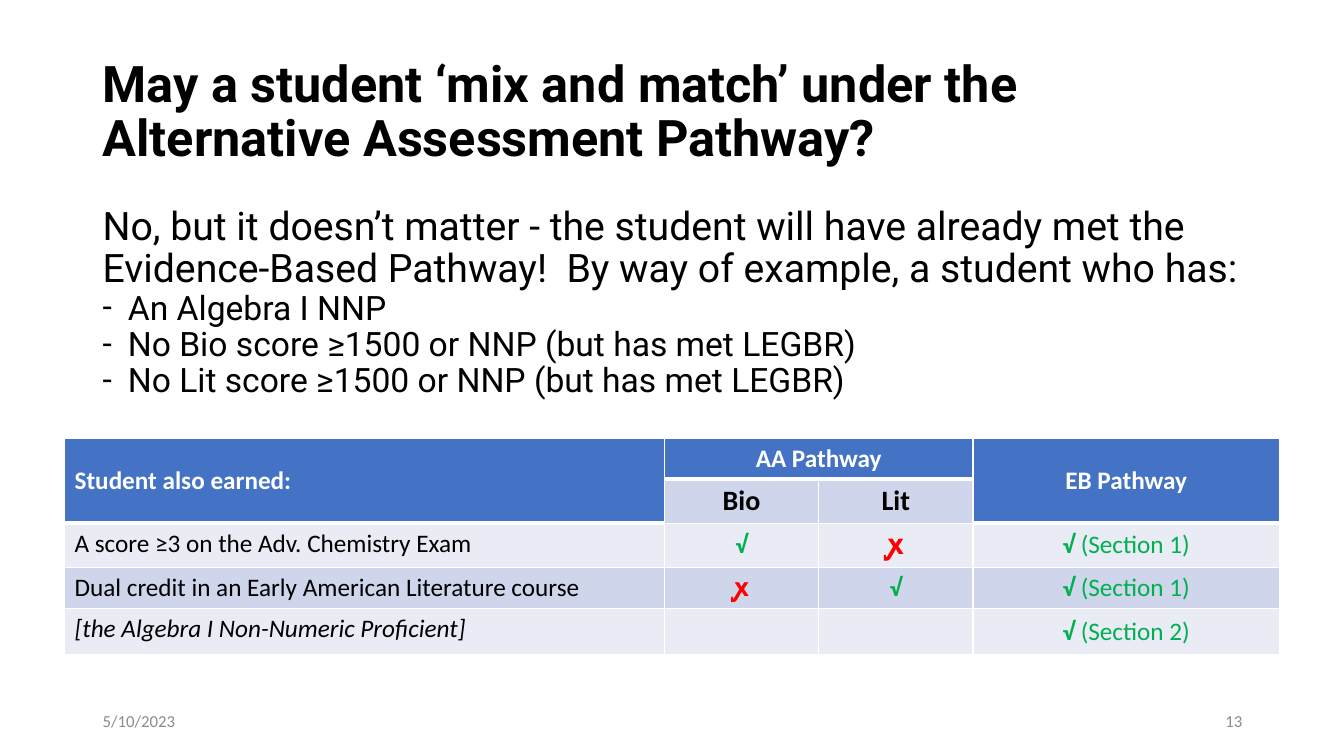
from lxml import etree
from pptx import Presentation
from pptx.dml.color import RGBColor
from pptx.enum.text import MSO_ANCHOR, PP_ALIGN
from pptx.oxml.ns import qn
from pptx.util import Inches, Pt

LEFT, MID, RIGHT = PP_ALIGN.LEFT, PP_ALIGN.CENTER, PP_ALIGN.RIGHT
TOP, CENTER = MSO_ANCHOR.TOP, MSO_ANCHOR.MIDDLE
WIDE, HIGH = 13.33, 7.5
EDGE, SPAN = 0.92, 11.5
COLS = [5.95, 1.53, 1.53, 3.04]
ROWS = [0.39, 0.44, 0.44, 0.41, 0.45]
HEX = {"ink": "000000", "white": "FFFFFF", "gray": "8C8C8C", "head": "4472C4",
       "dark": "CFD5EA", "light": "E9EBF5", "yes": "00B050", "no": "FF0000"}
FILLS = ["head", "dark", "light", "dark", "light"]


def color(name):
    """Return the named colour."""
    return RGBColor.from_string(HEX[name])


def write(para, text, size, tint="ink", face="Calibri", bold=False, slant=False):
    """Add one styled run to a paragraph."""
    run = para.add_run()
    run.text = text
    font = run.font
    font.name, font.size, font.bold, font.italic = face, Pt(size), bold, slant
    font.color.rgb = color(tint)


def frame(slide, box, anchor):
    """Add a wrapping text box and return its frame."""
    text = slide.shapes.add_textbox(*map(Inches, box)).text_frame
    text.word_wrap = True
    text.vertical_anchor = anchor
    return text


def title(slide, box, lines):
    """Write the heading, one run for each line."""
    para = frame(slide, box, CENTER).paragraphs[0]
    para.line_spacing = 0.9
    for num, line in enumerate(lines):
        if num:
            para.add_line_break()
        write(para, line, 36, face="Roboto", bold=True)


def dash(para):
    """Give a paragraph a hanging dash bullet."""
    props = para._p.get_or_add_pPr()
    props.set("marL", str(Inches(0.25)))
    props.set("indent", str(-Inches(0.25)))
    etree.SubElement(props, qn("a:buFont")).set("typeface", "Roboto")
    etree.SubElement(props, qn("a:buChar")).set("char", "-")


def body(slide, box, lead, items):
    """Write the answer and its dashed list."""
    text = frame(slide, box, TOP)
    para = text.paragraphs[0]
    para.line_spacing = 0.9
    write(para, lead, 28, face="Roboto")
    for item in items:
        para = text.add_paragraph()
        dash(para)
        para.line_spacing = 0.9
        write(para, item, 24, face="Roboto")


def footer(slide, box, date, page):
    """Write the date at the left and the page at the right of the box."""
    left, top, width, height = box
    part = 3
    for start, text, align in ((left, date, LEFT), (left + width - part, page, RIGHT)):
        para = frame(slide, (start, top, part, height), CENTER).paragraphs[0]
        para.alignment = align
        write(para, text, 12, "gray")


def border(cell, sides):
    """Draw white cell edges with the given widths in points."""
    props = cell._tc.get_or_add_tcPr()
    for spot, (side, width) in enumerate(sides.items()):
        line = etree.Element(qn("a:ln" + side), w=str(Pt(width)))
        fill = etree.SubElement(line, qn("a:solidFill"))
        etree.SubElement(fill, qn("a:srgbClr")).set("val", HEX["white"])
        props.insert(spot, line)


def is_head(row, col):
    """Tell whether a cell belongs to the blue header."""
    return row == 0 or (row == 1 and col in (0, 3))


def grid(slide, box, cells):
    """Build the pathway table from runs listed by row and column."""
    table = slide.shapes.add_table(len(ROWS), len(COLS), *map(Inches, box)).table
    for col, width in zip(table.columns, COLS):
        col.width = Inches(width)
    for row, height in zip(table.rows, ROWS):
        row.height = Inches(height)
    for r, shade in enumerate(FILLS):
        for c in range(len(COLS)):
            cell = table.cell(r, c)
            cell.fill.solid()
            cell.fill.fore_color.rgb = color("head" if is_head(r, c) else shade)
            border(cell, {"L": 1, "R": 1, "T": 3 if r and is_head(r - 1, c) else 1,
                          "B": 3 if is_head(r, c) else 1})
            cell.vertical_anchor = TOP if c == 0 and r > 1 else CENTER
            para = cell.text_frame.paragraphs[0]
            para.alignment = MID if c else LEFT
            for run in cells[r][c]:
                write(para, **run)
    for first, last in (((0, 0), (1, 0)), ((0, 1), (0, 2)), ((0, 3), (1, 3))):
        table.cell(*first).merge(table.cell(*last))


def head(text):
    """Return the runs of a header cell."""
    return [dict(text=text, size=18, tint="white", bold=True)]


def sub(text):
    """Return the runs of a subheader cell."""
    return [dict(text=text, size=20, bold=True)]


def plain(text, slant=False):
    """Return the runs of a row label."""
    return [dict(text=text, size=18, slant=slant)]


def cross(size):
    """Return the runs of a cross."""
    return [dict(text="ꭙ", size=size, tint="no", bold=True)]


def met(part):
    """Return a tick followed by the section that is met."""
    return [dict(text="√ ", size=18, tint="yes", bold=True),
            dict(text=f"(Section {part})", size=18, tint="yes")]


def main():
    """Build and save the slide."""
    deck = Presentation()
    deck.slide_width, deck.slide_height = Inches(WIDE), Inches(HIGH)
    slide = deck.slides.add_slide(deck.slide_layouts[6])
    yes = [dict(text="√", size=18, tint="yes", bold=True)]
    title(slide, (EDGE, 0.4, SPAN, 1.45),
          ["May a student ‘mix and match’ under the ", "Alternative Assessment Pathway?"])
    body(slide, (EDGE, 2, SPAN, 4.76),
         "No, but it doesn’t matter - the student will have already met the "
         "Evidence-Based Pathway!  By way of example, a student who has:",
         ["An Algebra I NNP",
          "No Bio score ≥1500 or NNP (but has met LEGBR)",
          "No Lit score ≥1500 or NNP (but has met LEGBR)"])
    footer(slide, (EDGE, 6.95, SPAN, 0.4), "5/10/2023", "13")
    grid(slide, (0.64, 4.35, sum(COLS), sum(ROWS)), [
        [head("Student also earned:"), head("AA Pathway"), [], head("EB Pathway")],
        [[], sub("Bio"), sub("Lit"), []],
        [plain("A score ≥3 on the Adv. Chemistry Exam"), yes, cross(20), met(1)],
        [plain("Dual credit in an Early American Literature course"),
         cross(18), yes, met(1)],
        [plain("[the Algebra I Non-Numeric Proficient]", True), [], [], met(2)],
    ])
    deck.save("out.pptx")


if __name__ == "__main__":
    main()
